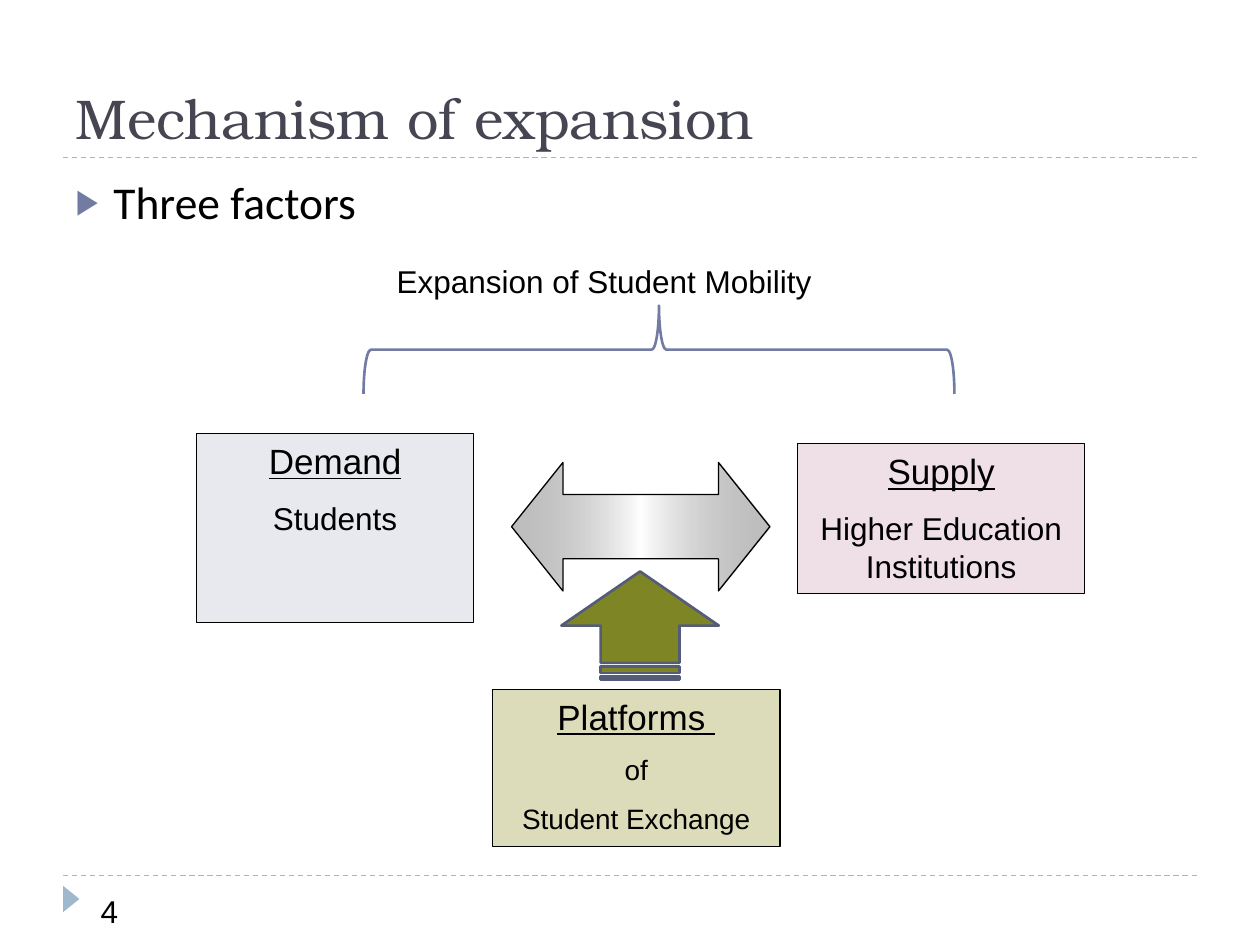
import lxml.etree
import pptx
import pptx.dml.color
import pptx.enum.dml
import pptx.enum.shapes
import pptx.enum.text
import pptx.oxml.ns
import pptx.util

PX = 9144  # 100 px to the inch
COLORS = {
    "black": "000000", "title": "464653", "accent": "727CA3", "rule": "9FB8CD",
    "demand": "666699", "supply": "993366", "platforms": "808000",
    "up_arrow": "7D8525", "up_edge": "545C79", "gray": "808080", "white": "FFFFFF",
}
SHAPES = pptx.enum.shapes.MSO_SHAPE
ALIGN = pptx.enum.text.PP_ALIGN
ANCHOR = pptx.enum.text.MSO_ANCHOR


def rgb(name):
    return pptx.dml.color.RGBColor.from_string(COLORS[name])


def emu(*lengths):
    return [pptx.util.Emu(length * PX) for length in lengths]


def add_xml(parent, tag, **attributes):
    element = lxml.etree.SubElement(parent, pptx.oxml.ns.qn(tag))
    for key, value in attributes.items():
        element.set(key, str(value))
    return element


def put_box(shape, box):
    for name, value in zip(("left", "top", "width", "height"), emu(*box)):
        setattr(shape, name, value)


def write(para, text, color="black", **font):
    span = para.add_run()
    span.text = text
    for name, value in font.items():
        setattr(span.font, name, pptx.util.Pt(value) if name == "size" else value)
    span.font.color.rgb = rgb(color)


def prepare_frame(shape, anchor=ANCHOR.TOP):
    frame = shape.text_frame
    settings = {"word_wrap": True, "vertical_anchor": anchor,
                "auto_size": pptx.enum.text.MSO_AUTO_SIZE.NONE}
    for name, value in settings.items():
        setattr(frame, name, value)
    return frame


def draw_shape(page, kind, box, fill=None, alpha=None, line=None, width=0.75, turn=0):
    """Add a preset shape; alpha is the opacity of its fill in percent."""
    shape = page.shapes.add_shape(kind, *emu(*box))
    shape.shadow.inherit = False
    shape.rotation = turn
    if fill:
        shape.fill.solid()
        shape.fill.fore_color.rgb = rgb(fill)
        if alpha:
            tint = shape._element.spPr.find(".//" + pptx.oxml.ns.qn("a:srgbClr"))
            add_xml(tint, "a:alpha", val=alpha * 1000)
    else:
        shape.fill.background()
    if line:
        shape.line.color.rgb = rgb(line)
        shape.line.width = pptx.util.Pt(width)
    else:
        shape.line.fill.background()
    return shape


def draw_label(page, box, text):
    frame = prepare_frame(page.shapes.add_textbox(*emu(*box)))
    write(frame.paragraphs[0], text, size=18, name="Arial")


def draw_rule(page, left, top, width):
    rule = page.shapes.add_connector(
        pptx.enum.shapes.MSO_CONNECTOR.STRAIGHT, *emu(left, top, left + width, top))
    rule.line.color.rgb = rgb("rule")
    rule.line.width = pptx.util.Pt(0.75)
    rule.line.dash_style = pptx.enum.dml.MSO_LINE.DASH
    add_xml(rule._element.spPr, "a:effectLst")


def draw_header(page, box):
    left, top, width, height = box
    draw_rule(page, left, top + height, width)
    title = page.shapes.title
    put_box(title, box)
    para = prepare_frame(title, ANCHOR.BOTTOM).paragraphs[0]
    para.alignment = ALIGN.LEFT
    write(para, "Mechanism of expansion", "title", size=32, name="TeX Gyre Bonum")


def draw_bullets(page, box, lines):
    body = page.placeholders[1]
    put_box(body, box)
    frame = prepare_frame(body)
    for index, text in enumerate(lines):
        para = frame.add_paragraph() if index else frame.paragraphs[0]
        para.space_before = pptx.util.Pt(6)
        properties = para._p.get_or_add_pPr()
        indent = 30 * PX
        properties.set("marL", str(indent))
        properties.set("indent", str(-indent))
        add_xml(add_xml(properties, "a:buClr"), "a:srgbClr", val=COLORS["accent"])
        add_xml(properties, "a:buSzPct", val=76000)
        add_xml(properties, "a:buChar", char="▶")
        write(para, text, size=26, name="Calibri")


def draw_footer(page, box, number):
    left, top, width, height = box
    draw_rule(page, left, top, width)
    draw_shape(page, SHAPES.ISOSCELES_TRIANGLE, (left - 4, top + 12, 21, 13),
               "rule", turn=90)
    draw_label(page, (left + 20, top + 8, 133, height - 8), number)


def draw_factor(page, box, color, alpha, heading, size, lines):
    card = draw_shape(page, SHAPES.RECTANGLE, box, color, alpha, "black")
    frame = prepare_frame(card)
    frame.paragraphs[0].alignment = ALIGN.CENTER
    write(frame.paragraphs[0], heading, size=20, name="Arial", underline=True)
    for text in lines:
        para = frame.add_paragraph()
        para.alignment = ALIGN.CENTER
        para.space_before = pptx.util.Pt(size * 0.54)
        write(para, text, size=size, name="Arial")


def draw_exchange_arrow(page, box):
    arrow = draw_shape(page, SHAPES.LEFT_RIGHT_ARROW, box, line="black")
    arrow.adjustments[0] = 0.5
    arrow.adjustments[1] = 0.4
    arrow.fill.gradient()
    arrow.fill.gradient_angle = 0
    stops = arrow._element.spPr.find(".//" + pptx.oxml.ns.qn("a:gsLst"))
    for stop in list(stops):
        stops.remove(stop)
    for position, color, alpha in ((0, "gray", 51), (50, "white", 100), (100, "gray", 51)):
        stop = add_xml(stops, "a:gs", pos=position * 1000)
        tint = add_xml(stop, "a:srgbClr", val=COLORS[color])
        add_xml(tint, "a:alpha", val=alpha * 1000)


def draw_mechanism(page, box):
    left, top = box[:2]

    def place(x, y, width, height):
        return left + x, top + y, width, height

    draw_factor(page, place(0, 141, 220, 150), "demand", 15, "Demand", 18, ["Students"])
    draw_factor(page, place(477, 149, 228, 119), "supply", 15, "Supply", 18,
                ["Higher Education Institutions"])
    draw_factor(page, place(235, 344, 228, 125), "platforms", 27, "Platforms ", 16,
                ["of", "Student Exchange"])
    draw_exchange_arrow(page, place(250, 164, 205, 102))
    draw_shape(page, SHAPES.STRIPED_RIGHT_ARROW, place(309, 231, 86, 125),
               "up_arrow", line="up_edge", width=1.5, turn=270)
    draw_shape(page, SHAPES.RIGHT_BRACE, place(332, -160, 70, 469),
               line="accent", width=1.5, turn=270)
    draw_label(page, place(149, 0, 406, 40), "Expansion of Student Mobility")


def main():
    deck = pptx.Presentation()
    deck.slide_width, deck.slide_height = emu(1000, 750)
    page = deck.slides.add_slide(deck.slide_layouts[1])
    draw_header(page, (50, 17, 900, 108))
    draw_bullets(page, (50, 133, 900, 92), ["Three factors"])
    draw_mechanism(page, (156, 203, 705, 469))
    draw_footer(page, (50, 695, 900, 48), "4")
    deck.save("out.pptx")


if __name__ == "__main__":
    main()
